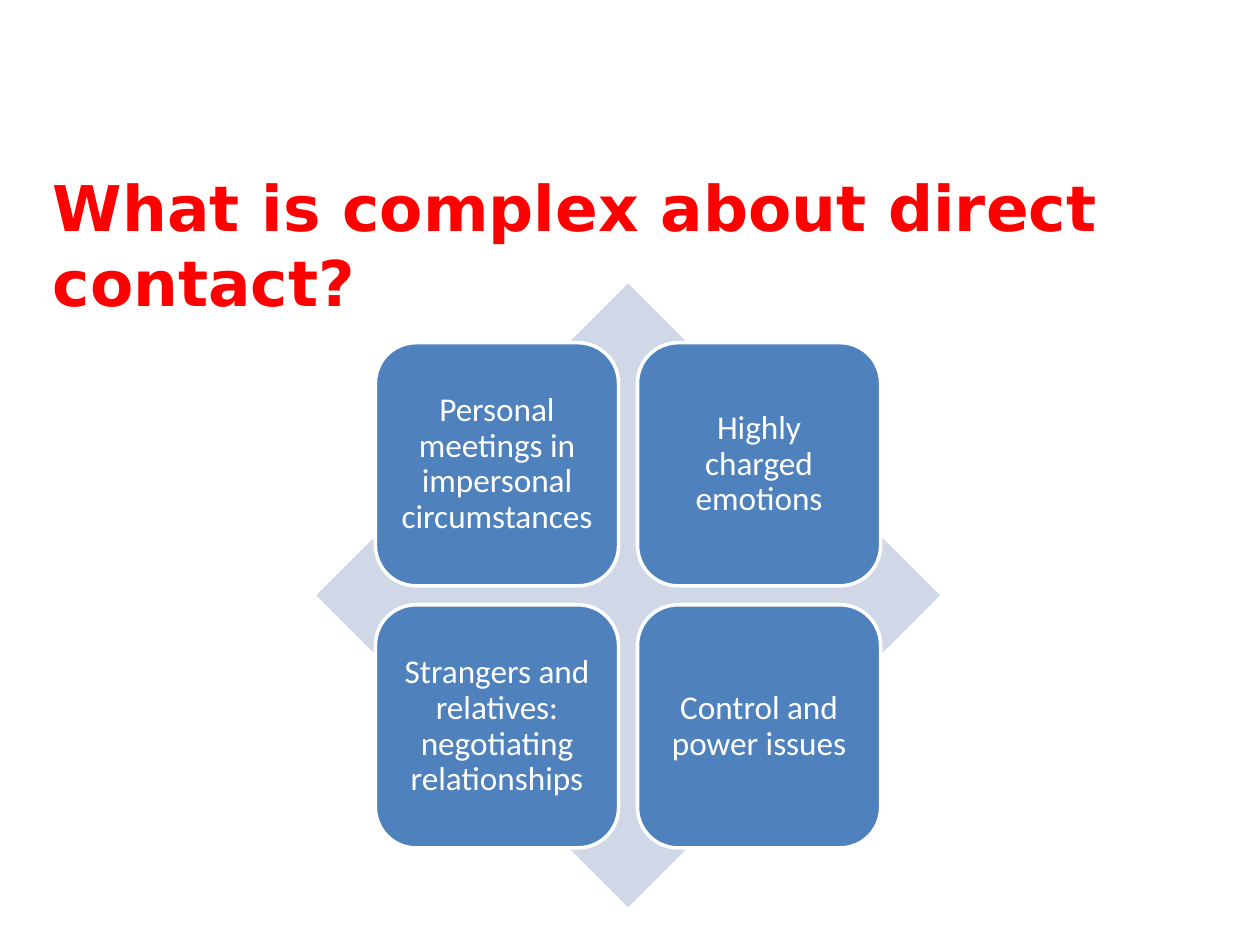
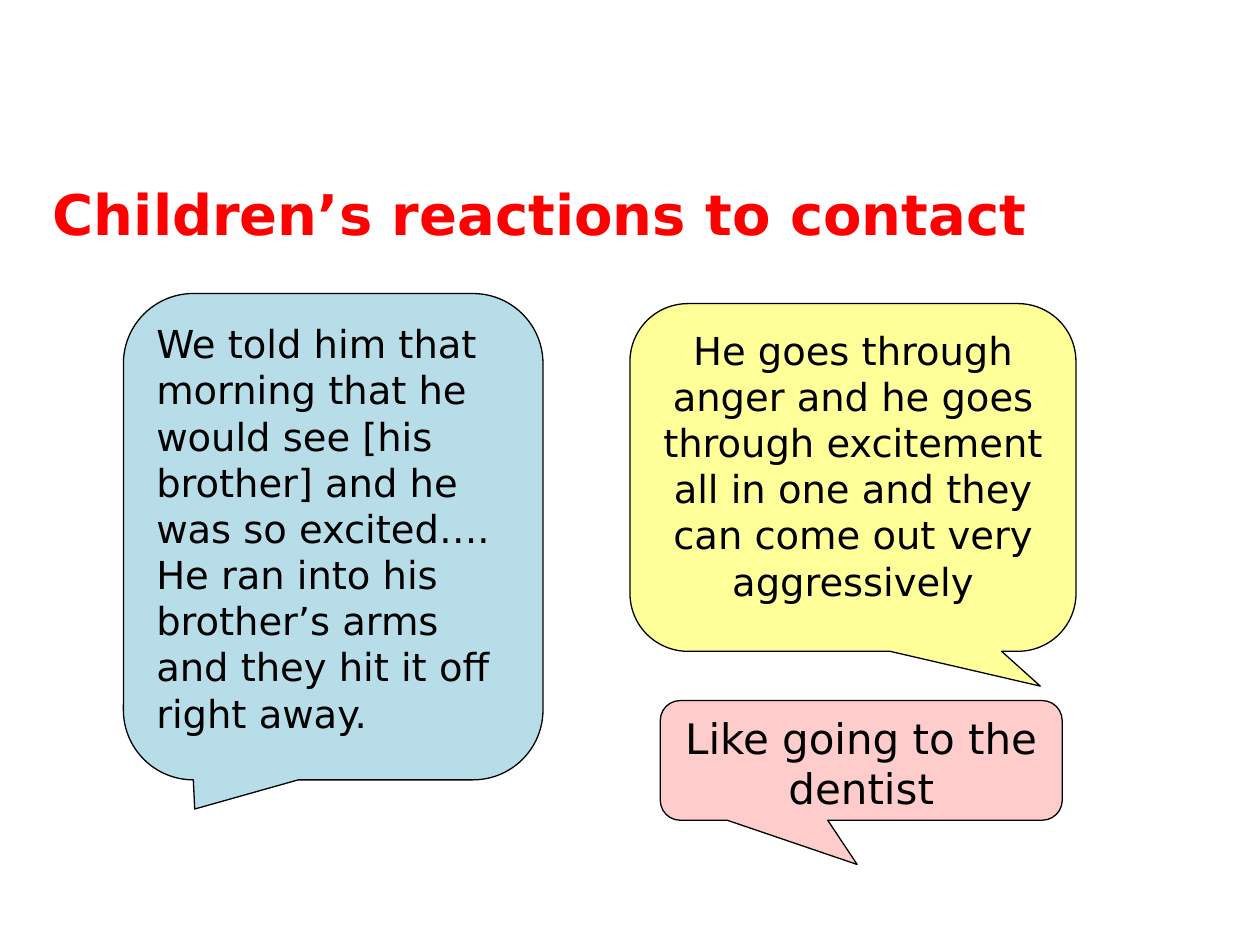
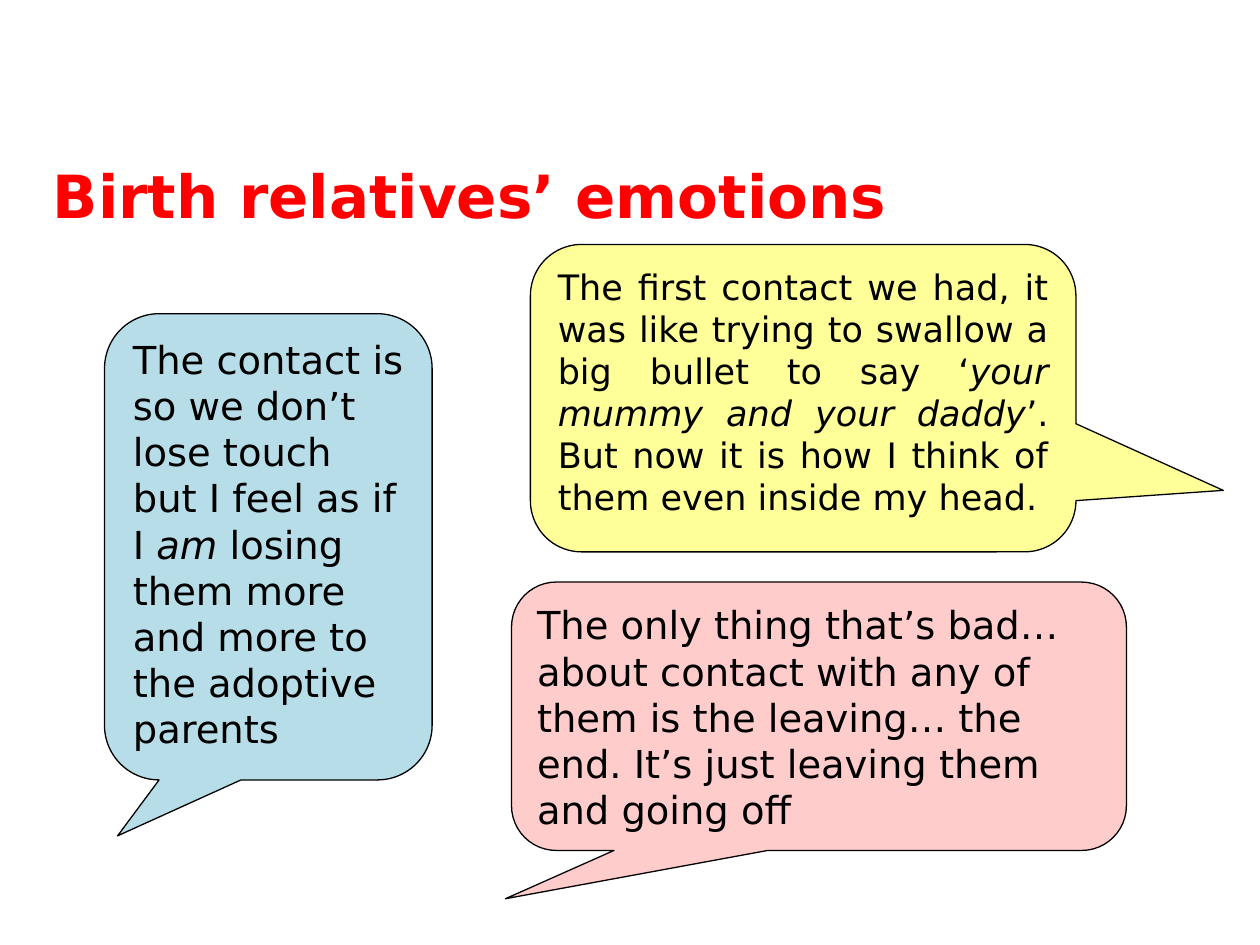
from pptx import Presentation
from pptx.dml.color import RGBColor
from pptx.enum.shapes import MSO_SHAPE as Shape
from pptx.enum.text import MSO_ANCHOR as Anchor, MSO_AUTO_SIZE as AutoSize, PP_ALIGN as Align
from pptx.util import Inches, Pt

COLOURS = {
    "title": "FF0000", "ink": "000000", "white": "FFFFFF",
    "diamond": "D0D8E8", "tile": "4F81BD",
    "blue": "B7DEE8", "yellow": "FFFF99", "pink": "FFCCCC",
}
QUOTE_FONT, TILE_FONT = "DejaVu Sans", "Calibri"
TITLE_LEFT, TITLE_WIDTH, TITLE_HEIGHT = 0.32, 9.41, 1.25


def colour(name):
    return RGBColor.from_string(COLOURS[name])


def add_run(paragraph, words, size, font, ink, bold=False, italic=False):
    run = paragraph.add_run()
    run.text = words
    run.font.size = Pt(size)
    run.font.name = font
    run.font.bold = bold
    run.font.italic = italic
    run.font.color.rgb = colour(ink)


def add_box(slide, preset, box, fill, line=None, line_width=0.75):
    """Draw a flat preset shape in box (left, top, width, height)."""
    shape = slide.shapes.add_shape(preset, *map(Inches, box))
    shape.shadow.inherit = False
    shape.fill.solid()
    shape.fill.fore_color.rgb = colour(fill)
    if line:
        shape.line.color.rgb = colour(line)
        shape.line.width = Pt(line_width)
    else:
        shape.line.fill.background()
    return shape


def add_titled_slide(prs, words, top, size):
    slide = prs.slides.add_slide(prs.slide_layouts[5])
    title = slide.shapes.title
    title.left, title.top = Inches(TITLE_LEFT), Inches(top)
    title.width, title.height = Inches(TITLE_WIDTH), Inches(TITLE_HEIGHT)
    frame = title.text_frame
    frame.auto_size = AutoSize.NONE
    frame.vertical_anchor = Anchor.MIDDLE
    paragraph = frame.paragraphs[0]
    paragraph.alignment = Align.LEFT
    add_run(paragraph, words, size, QUOTE_FONT, "title", bold=True)
    return slide


def add_matrix(slide, left, top, side, issues):
    """Four tiles, two by two, centred over a diamond."""
    tile, gap = 1.93, 0.15
    margin = (side - 2 * tile - gap) / 2
    add_box(slide, Shape.DIAMOND, (left, top, side, side), "diamond")
    for index, issue in enumerate(issues):
        row, column = divmod(index, 2)
        x = left + margin + column * (tile + gap)
        y = top + margin + row * (tile + gap)
        shape = add_box(slide, Shape.ROUNDED_RECTANGLE, (x, y, tile, tile),
                        "tile", "white", 2)
        frame = shape.text_frame
        frame.word_wrap = True
        frame.vertical_anchor = Anchor.MIDDLE
        frame.margin_left = frame.margin_right = Inches(0.09)
        frame.margin_top = frame.margin_bottom = Inches(0.09)
        paragraph = frame.paragraphs[0]
        paragraph.alignment = Align.CENTER
        paragraph.line_spacing = 0.9
        add_run(paragraph, issue, 19, TILE_FONT, "white")


def add_quote(slide, box, fill, tip, parts, size=22, align=Align.LEFT):
    """Speech bubble; tip is its point relative to the box centre.

    Every second entry of parts is in italics.
    """
    bubble = add_box(slide, Shape.ROUNDED_RECTANGULAR_CALLOUT, box, fill, "ink")
    bubble.adjustments[0], bubble.adjustments[1] = tip
    frame = bubble.text_frame
    frame.word_wrap = True
    frame.vertical_anchor = Anchor.TOP
    paragraph = frame.paragraphs[0]
    paragraph.alignment = align
    for index, words in enumerate(parts):
        add_run(paragraph, words, size, QUOTE_FONT, "ink", italic=index % 2 == 1)


def build_complexity(prs):
    slide = add_titled_slide(prs, "What is complex about direct contact?", 1.31, 36)
    add_matrix(slide, 2.51, 2.25, 4.95, [
        "Personal meetings in impersonal circumstances",
        "Highly charged emotions",
        "Strangers and relatives: negotiating relationships",
        "Control and power issues",
    ])


def build_children(prs):
    slide = add_titled_slide(prs, "Children’s reactions to contact", 1.07, 32)
    add_quote(slide, (0.98, 2.33, 3.33, 3.86), "blue", (-0.33, 0.56), [
        "We told him that morning that he would see [his brother] and he was so "
        "excited…. He ran into his brother’s arms and they hit it off right away."])
    add_quote(slide, (5, 2.41, 3.54, 2.76), "yellow", (0.42, 0.6), [
        "He goes through anger and he goes through excitement all in one and "
        "they can come out very aggressively"], align=Align.CENTER)
    add_quote(slide, (5.24, 5.56, 3.19, 0.95), "pink", (-0.01, 0.87),
              ["Like going to the dentist"], 24, Align.CENTER)


def build_relatives(prs):
    slide = add_titled_slide(prs, "Birth relatives’ emotions", 0.92, 34)
    add_quote(slide, (0.83, 2.49, 2.6, 3.7), "blue", (-0.46, 0.62), [
        "The contact is so we don’t lose touch but I feel as if I ", "am",
        " losing them more and more to the adoptive parents"])
    add_quote(slide, (4.21, 1.94, 4.33, 2.44), "yellow", (0.77, 0.3), [
        "The first contact we had, it was like trying to swallow a big bullet to say ‘",
        "your mummy and your daddy",
        "’. But now it is how I think of them even inside my head."],
        20, Align.JUSTIFY)
    add_quote(slide, (4.06, 4.62, 4.88, 2.13), "pink", (-0.51, 0.68), [
        "The only thing that’s bad… about contact with any of them is the "
        "leaving… the end. It’s just leaving them and going off"])


def main():
    prs = Presentation()
    prs.slide_width, prs.slide_height = Inches(10), Inches(7.5)
    build_complexity(prs)
    build_children(prs)
    build_relatives(prs)
    prs.save("out.pptx")


if __name__ == "__main__":
    main()
